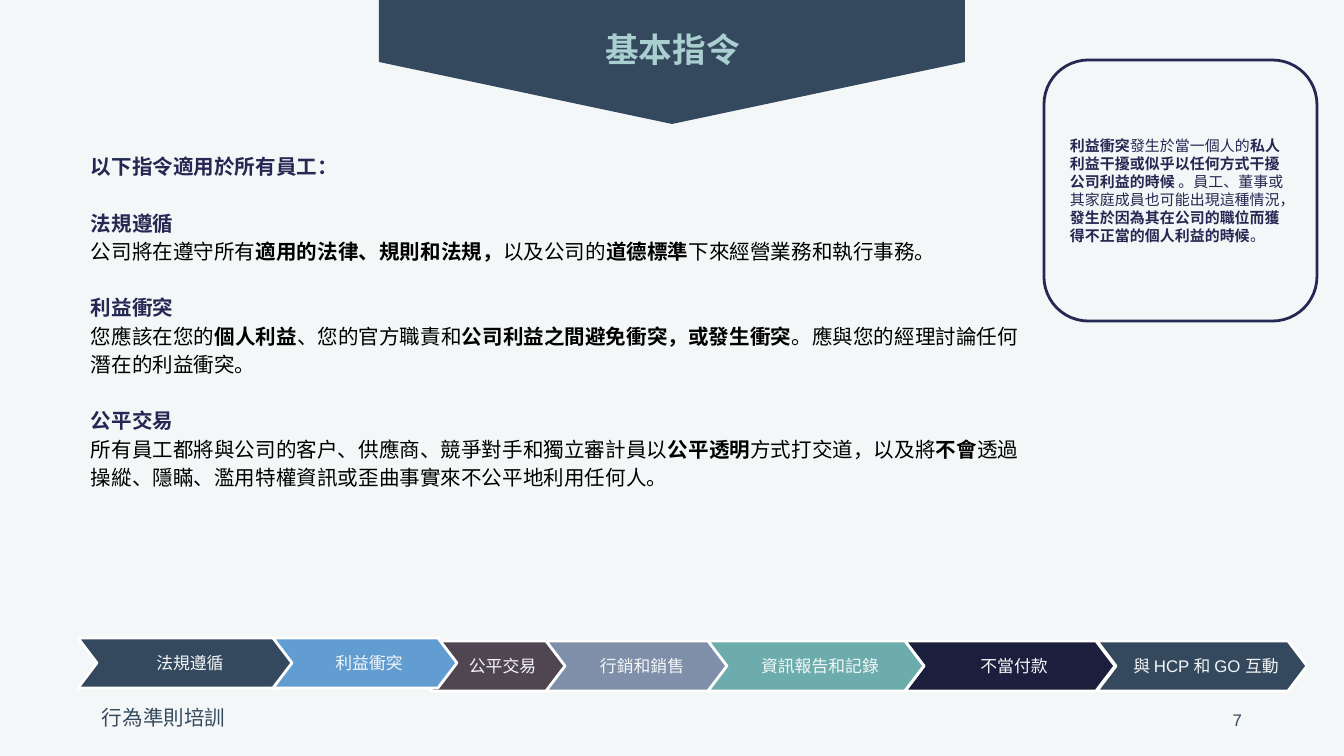
from lxml import etree
from pptx import Presentation
from pptx import util as u
from pptx.dml.color import RGBColor
from pptx.enum import shapes, text
from pptx.oxml.ns import qn

PX = 914400 / 134.4
CJK = "Noto Sans CJK TC"
SLATE, NAVY, PALE, BLACK = "34495E", "242852", "F4F7F7", "000000"
SMALL_INSETS = (9, 5, 9, 5)
WIDE_INSETS = (13, 13, 13, 13)

# Each section: heading, then its runs with the bold ones marked True
SECTIONS = [
    ("法規遵循", [
        ("公司將在遵守所有", False), ("適用的法律、規則和法規，", True),
        ("以及公司的", False), ("道德標準", True),
        ("下來經營業務和執行事務。", False)]),
    ("利益衝突", [
        ("您應該在您的", False), ("個人利益", True),
        ("、您的官方職責和", False),
        ("公司利益之間避免衝突，或發生衝突", True),
        ("。應與您的經理討論任何潛在的利益衝突。", False)]),
    ("公平交易", [
        ("所有員工都將與公司的客戶、供應商、競爭對手和獨立審計員以", False),
        ("公平透明", True), ("方式打交道，以及將", False), ("不會", True),
        ("透過操縱、隱瞞、濫用特權資訊或歪曲事實來不公平地利用任何人。", False)]),
]

DEFINITION = [
    ("利益衝突", True), ("發生於當一個人的", False),
    ("私人利益干擾或似乎以任何方式干擾公司利益的時候 ", True),
    ("。員工、董事或其家庭成員也可能出現這種情況，", False),
    ("發生於因為其在公司的職位而獲得不正當的個人利益的時候", True),
    ("。", False),
]

# Label, left, top, width, fill; from back to front
STEPS = [
    ("公平交易", 430, 641, 137, "4F4651"),
    ("不當付款", 905, 641, 210, "1B1E3D"),
    ("行銷和銷售", 546, 641, 184, "7F8FA9"),
    ("資訊報告和記錄", 708, 641, 216, "6DACAC"),
    ("法規遵循", 78, 638, 216, SLATE),
    ("利益衝突", 273, 638, 184, "629DD1"),
    ("與 HCP 和 GO 互動", 1097, 641, 210, SLATE),
]


def px(length):
    return u.Emu(round(length * PX))


def colour(value):
    return RGBColor.from_string(value)


def add_paragraph(frame, runs, size=11, color=BLACK, font="Arial",
                  align=text.PP_ALIGN.LEFT, spacing=None, before=0):
    """Write (text, bold) runs, using the first paragraph while it is empty."""
    paragraph = frame.paragraphs[0]
    if paragraph.runs:
        paragraph = frame.add_paragraph()
    paragraph.alignment = align
    paragraph.space_before = u.Pt(before)
    if spacing:
        paragraph.line_spacing = spacing
    for words, bold in runs:
        run = paragraph.add_run()
        run.text = words
        run.font.size = u.Pt(size)
        run.font.bold = bold
        run.font.name = font
        run.font.color.rgb = colour(color)
        east_asian = etree.SubElement(run.font._element, qn("a:ea"))
        east_asian.set("typeface", CJK)


def set_frame(shape, insets, anchor=text.MSO_ANCHOR.TOP):
    frame = shape.text_frame
    frame.word_wrap = True
    frame.auto_size = text.MSO_AUTO_SIZE.NONE
    frame.vertical_anchor = anchor
    (frame.margin_left, frame.margin_top,
     frame.margin_right, frame.margin_bottom) = map(px, insets)
    return frame


def add_text_box(slide, box, insets, anchor=text.MSO_ANCHOR.TOP):
    return set_frame(slide.shapes.add_textbox(*map(px, box)), insets, anchor)


def add_preset(slide, kind, box, adjust, fill=None, line=None):
    shape = slide.shapes.add_shape(kind, *map(px, box))
    shape.shadow.inherit = False
    shape.adjustments[0] = adjust
    if fill:
        shape.fill.solid()
        shape.fill.fore_color.rgb = colour(fill)
    else:
        shape.fill.background()
    if line:
        shape.line.color.rgb = colour(line)
        shape.line.width = u.Pt(1.5)
    else:
        shape.line.fill.background()
    return shape


def add_title(slide):
    banner = add_preset(slide, shapes.MSO_SHAPE.PENTAGON,
                        (610, -231, 124, 586), 0.5, fill=SLATE)
    banner.rotation = 90

    title = slide.shapes.title
    title.left, title.top, title.width, title.height = map(
        px, (300, 24, 745, 51))
    add_paragraph(set_frame(title, SMALL_INSETS), [("基本指令", True)],
                  size=18, color="AACFD0", align=text.PP_ALIGN.CENTER)
    # Bring the title in front of its banner
    slide.shapes.element.append(title.element)


def add_directives(slide):
    frame = add_text_box(slide, (78, 144, 966, 473), WIDE_INSETS)
    add_paragraph(frame, [("以下指令適用於所有員工：", True)],
                  color=NAVY, spacing=0.9)
    for heading, runs in SECTIONS:
        add_paragraph(frame, [(heading, True)], color=NAVY,
                      spacing=1.15, before=15)
        add_paragraph(frame, runs, spacing=1.15)


def add_definition(slide):
    callout = add_preset(slide, shapes.MSO_SHAPE.ROUNDED_RECTANGLE,
                         (1044, 60, 273, 261), 0.17, line=NAVY)
    frame = set_frame(callout, WIDE_INSETS, text.MSO_ANCHOR.MIDDLE)
    add_paragraph(frame, DEFINITION, size=8, color=NAVY)


def add_step(slide, label, left, top, width, fill):
    step = add_preset(slide, shapes.MSO_SHAPE.CHEVRON,
                      (left, top, width, 50), 0.38, fill, "FFFFFF")
    frame = set_frame(step, (8, 0, 0, 0), text.MSO_ANCHOR.MIDDLE)
    add_paragraph(frame, [(label, False)], size=9, color=PALE,
                  align=text.PP_ALIGN.CENTER)


def add_footer(slide):
    course = add_text_box(slide, (93, 700, 323, 34), SMALL_INSETS)
    add_paragraph(course, [("行為準則培訓", False)], color=SLATE, font=CJK)
    number = add_text_box(slide, (949, 700, 302, 40), SMALL_INSETS,
                          text.MSO_ANCHOR.MIDDLE)
    add_paragraph(number, [("7", False)], size=9, color=SLATE,
                  align=text.PP_ALIGN.RIGHT)


def main():
    deck = Presentation()
    deck.slide_width, deck.slide_height = px(1344), px(756)
    slide = deck.slides.add_slide(deck.slide_layouts[5])
    slide.background.fill.solid()
    slide.background.fill.fore_color.rgb = colour(PALE)

    # Footer, banner and body
    add_footer(slide)
    add_title(slide)
    add_directives(slide)
    add_definition(slide)

    # Chevron navigation
    for step in STEPS:
        add_step(slide, *step)

    deck.save("out.pptx")


if __name__ == "__main__":
    main()
